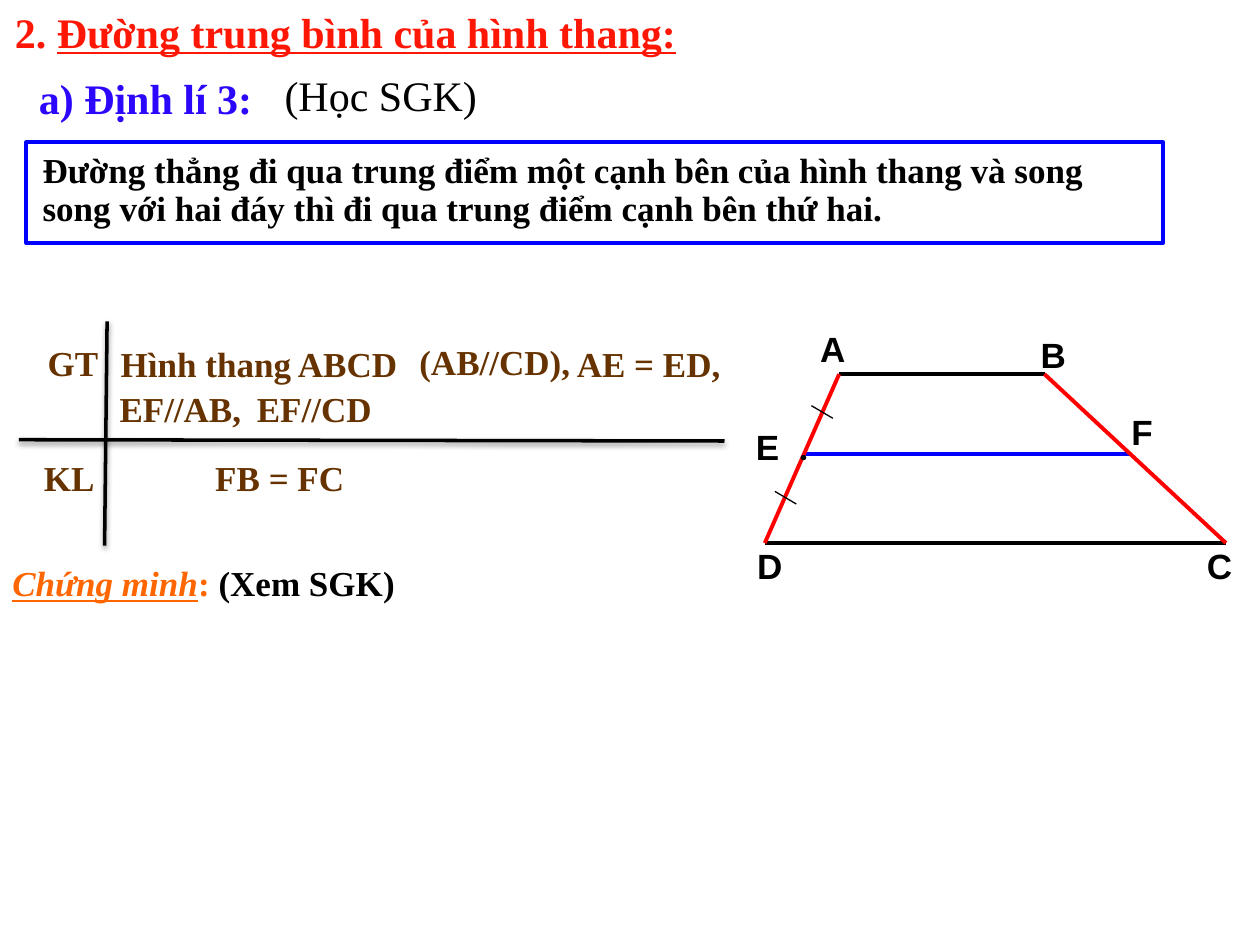
from lxml.etree import SubElement
from pptx import Presentation
from pptx.dml.color import RGBColor
from pptx.enum.shapes import MSO_CONNECTOR, MSO_SHAPE
from pptx.oxml.ns import qn
from pptx.util import Inches, Pt

COLORS = {"black": "000000", "red": "FF0000", "blue": "0000FF", "brown": "663300",
          "orange": "FF6600", "title": "FF1705", "violet": "2B08FC"}
SERIF, SANS = "Times New Roman", "Arial"


class SlideBuilder:
    def __init__(self, slide):
        self.slide = slide
        self.base = {"name": SERIF, "size": Pt(20), "bold": True}

    def color(self, name):
        return RGBColor.from_string(COLORS[name])

    def text(self, x, y, w, h, *runs, spacing=None):
        """Each run is (text, color name, format values that differ from the base)."""
        sp = self.slide.shapes.add_textbox(Inches(x), Inches(y), Inches(w), Inches(h))
        tf = sp.text_frame
        tf.word_wrap = True
        p = tf.paragraphs[0]
        if spacing:
            p.line_spacing = spacing
        for content, color, changes in runs:
            r = p.add_run()
            r.text = content
            for key, value in {**self.base, **changes}.items():
                setattr(r.font, key, value)
            r.font.color.rgb = self.color(color)

    def line(self, start, end, color="black", width=2.25, shadow=False):
        points = [Inches(v) for v in (*start, *end)]
        sp = self.slide.shapes.add_connector(MSO_CONNECTOR.STRAIGHT, *points)
        sp.line.color.rgb = self.color(color)
        sp.line.width = Pt(width)
        effects = SubElement(sp._element.spPr, qn("a:effectLst"))
        if shadow:
            outer = SubElement(effects, qn("a:outerShdw"), blurRad=str(Pt(3.1)),
                               dist=str(Pt(1.6)), dir="5400000", rotWithShape="0")
            clr = SubElement(outer, qn("a:srgbClr"), val=COLORS["black"])
            SubElement(clr, qn("a:alpha"), val="38000")

    def frame(self, x, y, w, h, color):
        sp = self.slide.shapes.add_shape(
            MSO_SHAPE.RECTANGLE, Inches(x), Inches(y), Inches(w), Inches(h))
        sp.shadow.inherit = False
        sp.fill.background()
        sp.line.color.rgb = self.color(color)
        sp.line.width = Pt(2.25)


def main():
    prs = Presentation()
    prs.slide_width, prs.slide_height = Inches(10), Inches(7.5)
    s = SlideBuilder(prs.slides.add_slide(prs.slide_layouts[6]))
    large = {"size": Pt(24)}

    # Headings
    s.text(0.02, 0, 6.03, 0.5, ("2. ", "title", large),
           ("Đường trung bình của hình thang:", "title", {**large, "underline": True}))
    s.text(0.21, 0.57, 2, 0.46, ("a) Định lí 3:", "violet", large), spacing=0.9)
    s.text(2.16, 0.5, 2.69, 0.5, ("(Học SGK)", "black", {**large, "bold": False}))

    # Theorem
    theorem = ("Đường thẳng đi qua trung điểm một cạnh bên của hình thang và song "
               "song với hai đáy thì đi qua trung điểm cạnh bên thứ hai.")
    s.text(0.24, 1.17, 9, 0.71, (theorem, "black", {}), spacing=0.9)
    s.frame(0.21, 1.13, 9.02, 0.8, "blue")

    # Hypothesis and conclusion
    for content, x, y, w in [
        ("GT", 0.28, 2.66, 0.69), ("Hình thang ABCD", 0.86, 2.67, 2.65),
        ("(AB//CD),", 3.23, 2.65, 1.43), ("AE = ED,", 4.48, 2.67, 1.46),
        ("EF//AB,", 0.85, 3.03, 1.21), ("EF//CD", 1.94, 3.03, 1.21),
        ("KL", 0.25, 3.57, 0.76), ("FB = FC", 1.61, 3.57, 1.35),
    ]:
        s.text(x, y, w, 0.43, (content, "brown", {}))
    s.line((0.85, 2.55), (0.83, 4.33), width=2, shadow=True)
    s.line((0.15, 3.49), (5.75, 3.5), width=2, shadow=True)

    # Trapezoid: bases, legs and midline
    A, B, C, D = (6.66, 2.97), (8.29, 2.97), (9.73, 4.31), (6.07, 4.31)
    E, F = (6.38, 3.6), (8.98, 3.6)
    for start, end, color in [(A, B, "black"), (D, C, "black"), (E, F, "blue"),
                              (A, D, "red"), (B, C, "red")]:
        s.line(start, end, color)

    # Equal-length ticks on AE and ED
    for x, y in [(6.44, 3.22), (6.15, 3.9)]:
        s.line((x, y), (x + 0.17, y + 0.1), width=0.75)

    # Point labels
    for name, x, y in [("A", 6.41, 2.55), ("B", 8.16, 2.6), ("C", 9.48, 4.27),
                       ("D", 5.91, 4.27), ("E", 5.9, 3.33), ("F", 8.88, 3.21)]:
        s.text(x, y, 0.52, 0.43, (name, "black", {"name": SANS}))
    s.text(6.24, 3.33, 0.3, 0.43, (".", "black", {"name": "Roboto"}))

    # Proof
    s.text(0, 4.41, 4.33, 0.44,
           ("Chứng minh", "orange", {"italic": True, "underline": True}),
           (": ", "orange", {}), ("(Xem SGK)", "black", {}))

    prs.save("out.pptx")


if __name__ == "__main__":
    main()
